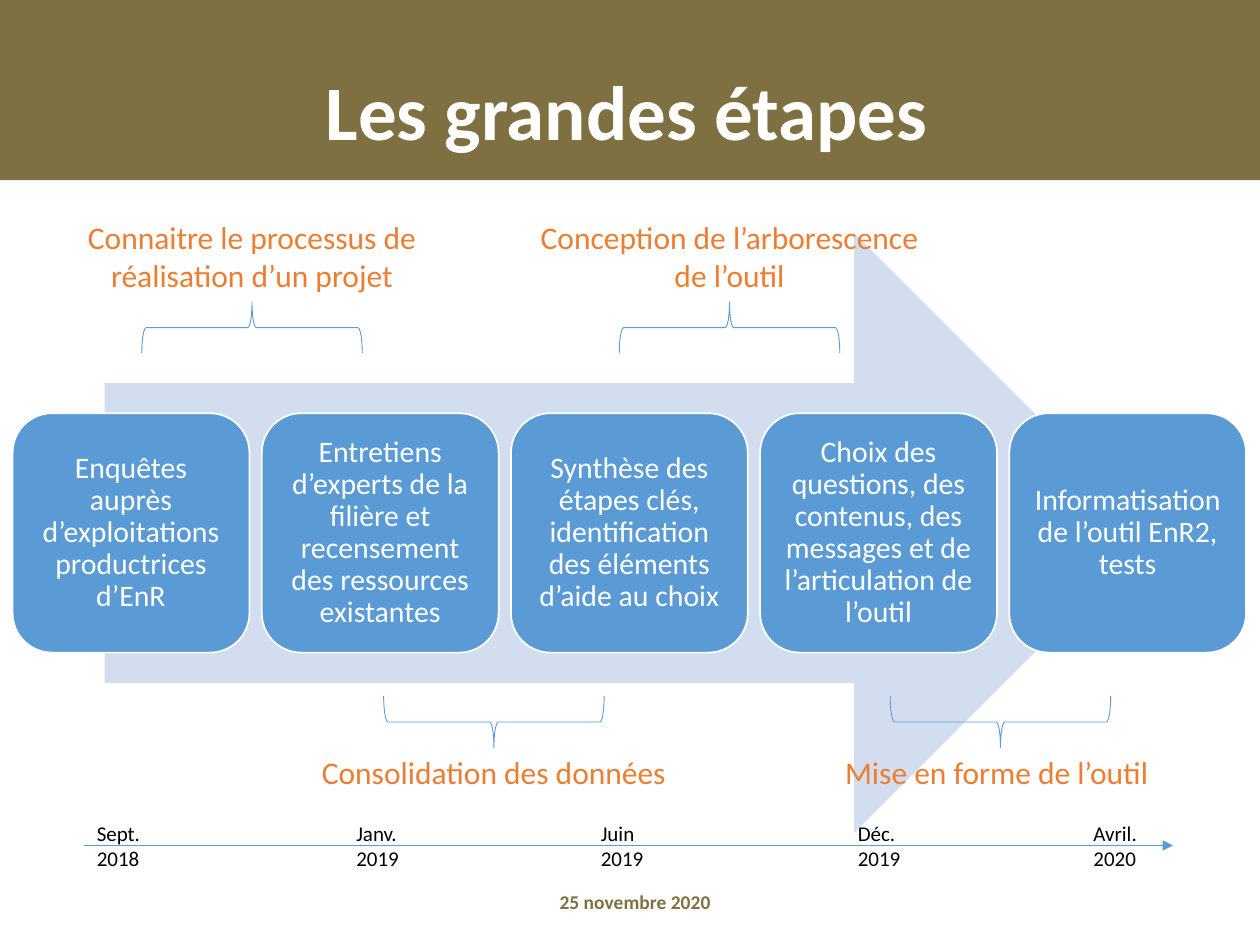
from lxml import etree
from pptx import Presentation
from pptx.dml.color import RGBColor
from pptx.enum import shapes, text
from pptx.oxml import ns
from pptx.util import Inches, Pt

OLIVE = RGBColor(0x7F, 0x70, 0x42)
PALE = RGBColor(0xD2, 0xDE, 0xEF)
BLUE = RGBColor(0x5B, 0x9B, 0xD5)
ORANGE = RGBColor(0xED, 0x7D, 0x31)
WHITE = RGBColor(0xFF, 0xFF, 0xFF)
BLACK = RGBColor(0, 0, 0)

KIND = shapes.MSO_SHAPE
MIDDLE = text.MSO_ANCHOR.MIDDLE
CENTER = text.PP_ALIGN.CENTER

STEPS = [
    "Enquêtes auprès d’exploitations productrices d’EnR",
    "Entretiens d’experts de la filière et recensement des ressources existantes",
    "Synthèse des étapes clés, identification des éléments d’aide au choix",
    "Choix des questions, des contenus, des messages et de l’articulation de l’outil",
    "Informatisation de l’outil EnR2, tests",
]
# Wording, centre of the label, centre of its brace
ABOVE = [
    ("Connaitre le processus de réalisation d’un projet", 2, 2),
    ("Conception de l’arborescence de l’outil", 5.79, 5.79),
]
BELOW = [
    ("Consolidation des données", 3.92, 3.92),
    ("Mise en forme de l’outil", 7.91, 7.94),
]
DATES = [
    ("Sept. 2018", 0),
    ("Janv. 2019", 2.06),
    ("Juin 2019", 4),
    ("Déc. 2019", 6.04),
    ("Avril. 2020", 7.91),
]


def inches(*box):
    return [Inches(v) for v in box]


def write(shape, words, size, color, bold=False, margin=None, anchor=None, **form):
    """Put one paragraph in a shape; form holds paragraph attributes."""
    frame = shape.text_frame
    frame.word_wrap = True
    if anchor is not None:
        frame.vertical_anchor = anchor
    if margin is not None:
        for side in ("left", "top", "right", "bottom"):
            setattr(frame, f"margin_{side}", Inches(margin))
    para = frame.paragraphs[0]
    for key, value in form.items():
        setattr(para, key, value)
    run = para.add_run()
    run.text = words
    for key, value in {"name": "Calibri", "size": Pt(size), "bold": bold}.items():
        setattr(run.font, key, value)
    run.font.color.rgb = color


def label(slide, box, words, size, color, **form):
    write(slide.shapes.add_textbox(*inches(*box)), words, size, color, **form)


def draw(slide, kind, box, fill=None, line=None, width=1):
    shape = slide.shapes.add_shape(kind, *inches(*box))
    shape.shadow.inherit = False
    if fill is None:
        shape.fill.background()
    else:
        shape.fill.solid()
        shape.fill.fore_color.rgb = fill
    if line is None:
        shape.line.fill.background()
    else:
        shape.line.color.rgb = line
        shape.line.width = Pt(width)
    return shape


def header(slide, left, top, width, height):
    draw(slide, KIND.RECTANGLE, (left, top, width, height), OLIVE)
    label(slide, (left + 0.23, top + 0.4, width - 0.51, height - 0.4),
          "Les grandes étapes", 44, WHITE, bold=True, anchor=MIDDLE,
          alignment=CENTER, line_spacing=0.9)


def process(slide, left, top, width, height):
    draw(slide, KIND.RIGHT_ARROW, (left + 0.73, top, 8.33, height), PALE)
    wide, high = 1.88, 1.9
    pitch = (width - wide) / (len(STEPS) - 1)
    for i, words in enumerate(STEPS):
        box = (left + i * pitch, top + (height - high) / 2, wide, high)
        card = draw(slide, KIND.ROUNDED_RECTANGLE, box, BLUE, WHITE)
        write(card, words, 17, WHITE, margin=0.07, anchor=MIDDLE,
              alignment=CENTER, line_spacing=0.9)


def phases(slide, items, top, high, middle, turn):
    """Labels at top, with braces centred on the height middle."""
    wide, thick, span = 3.49, 0.41, 1.75
    for words, mid, point in items:
        box = (point - thick / 2, middle - span / 2, thick, span)
        draw(slide, KIND.RIGHT_BRACE, box, line=BLUE, width=0.5).rotation = turn
        label(slide, (mid - wide / 2, top, wide, high), words, 18, ORANGE,
              alignment=CENTER)


def timeline(slide, left, top, width, height):
    mid = top + height / 2
    axis = slide.shapes.add_connector(
        shapes.MSO_CONNECTOR.STRAIGHT, *inches(left, mid, left + width, mid))
    axis.line.color.rgb = BLUE
    axis.line.width = Pt(0.5)
    etree.SubElement(axis.line._get_or_add_ln(), ns.qn("a:tailEnd"), type="triangle")
    etree.SubElement(axis._element.spPr, ns.qn("a:effectLst"))
    for words, shift in DATES:
        label(slide, (left + shift, top, 0.83, height), words, 12, BLACK)


def footer(slide, *box):
    label(slide, box, "25 novembre 2020", 11.1, OLIVE, bold=True, anchor=MIDDLE,
          alignment=CENTER, line_spacing=0.9)


def main():
    deck = Presentation()
    deck.slide_width, deck.slide_height = inches(10, 7.5)
    slide = deck.slides.add_slide(deck.slide_layouts[6])
    header(slide, 0, 0, 10, 1.43)
    process(slide, 0.1, 1.85, 9.79, 4.76)
    phases(slide, ABOVE, 1.68, 0.71, 2.6, 270)
    phases(slide, BELOW, 5.93, 0.4, 5.73, 90)
    timeline(slide, 0.67, 6.46, 8.64, 0.5)
    footer(slide, 4.3, 6.97, 1.48, 0.4)
    deck.save("out.pptx")


if __name__ == "__main__":
    main()
